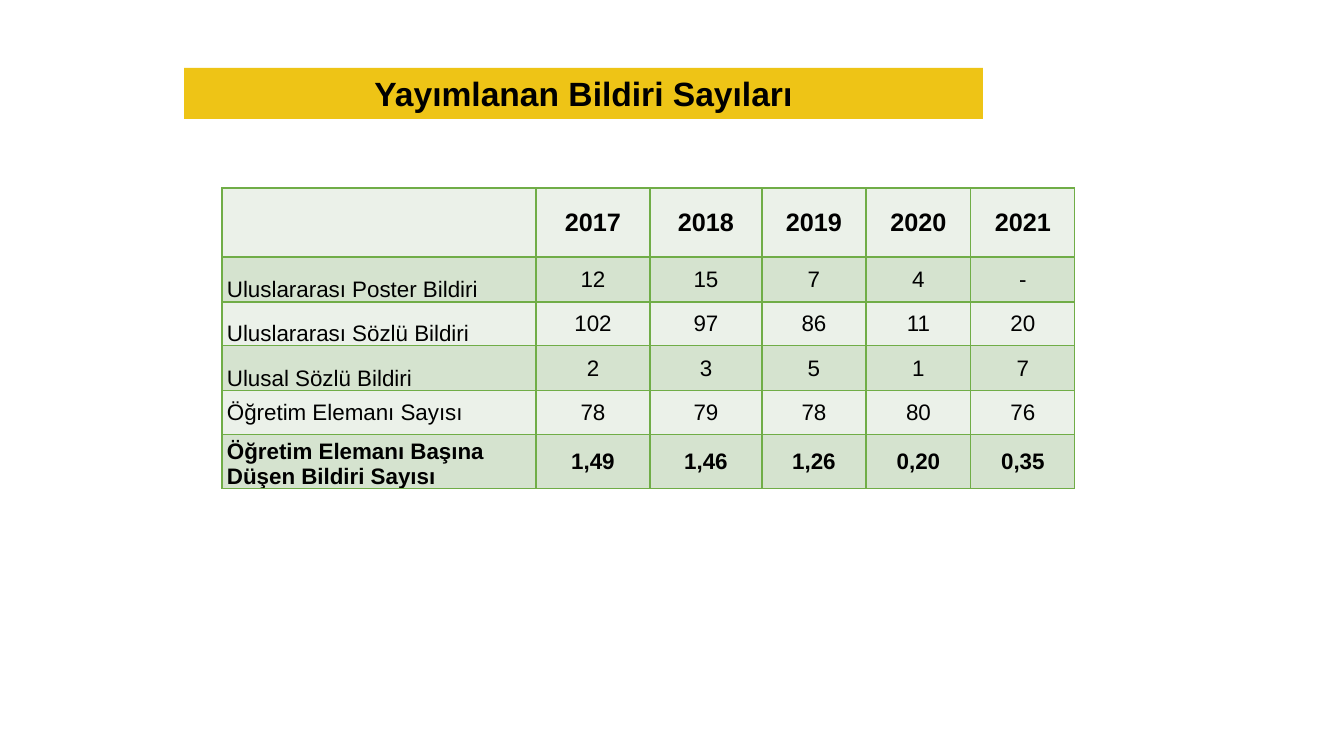
from lxml.etree import SubElement
from pptx import Presentation
from pptx.dml.color import RGBColor
from pptx.enum.text import MSO_ANCHOR as Anchor, MSO_AUTO_SIZE as AutoSize, PP_ALIGN as Align
from pptx.oxml.ns import qn
from pptx.util import Pt

EMU_PER_PX = 914400 / 100.8
FONT = "Arial"
BLACK = RGBColor(0x00, 0x00, 0x00)
GOLD = RGBColor(0xEE, 0xC4, 0x16)
GREEN = RGBColor(0x70, 0xAD, 0x47)
BANDS = [RGBColor(0xEB, 0xF1, 0xE9), RGBColor(0xD5, 0xE3, 0xCF)]

COLUMN_WIDTHS = [314, 114, 112, 104, 105, 104]
ROW_HEIGHTS = [69, 45, 44, 45, 44, 54]
PAPER_COUNTS = [
    ["", "2017", "2018", "2019", "2020", "2021"],
    ["Uluslararası Poster Bildiri", "12", "15", "7", "4", "-"],
    ["Uluslararası Sözlü Bildiri", "102", "97", "86", "11", "20"],
    ["Ulusal Sözlü Bildiri", "2", "3", "5", "1", "7"],
    ["Öğretim Elemanı Sayısı", "78", "79", "78", "80", "76"],
    ["Öğretim Elemanı Başına Düşen Bildiri Sayısı", "1,49", "1,46", "1,26", "0,20", "0,35"],
]
HEADER_ROW, STAFF_ROW, RATIO_ROW = 0, 4, 5


def px(length):
    return round(length * EMU_PER_PX)


def write_text(frame, text, size, bold, align):
    frame.text = text
    paragraph = frame.paragraphs[0]
    paragraph.alignment = align
    font = paragraph.font
    font.name, font.size, font.bold = FONT, Pt(size), bold
    font.color.rgb = BLACK


def add_banner(slide, text, left, top, width, height):
    banner = slide.shapes.title
    banner.left, banner.top, banner.width, banner.height = map(px, (left, top, width, height))
    banner.fill.solid()
    banner.fill.fore_color.rgb = GOLD
    frame = banner.text_frame
    frame.auto_size = AutoSize.NONE
    frame.vertical_anchor = Anchor.MIDDLE
    write_text(frame, text, 24, True, Align.CENTER)


def set_borders(cell, color, width):
    properties = cell._tc.get_or_add_tcPr()
    for side in ("lnL", "lnR", "lnT", "lnB"):
        line = SubElement(properties, qn(f"a:{side}"), w=str(Pt(width)))
        fill = SubElement(line, qn("a:solidFill"))
        SubElement(fill, qn("a:srgbClr"), val=str(color))


def format_cell(cell, text, row, column):
    is_label = column == 0
    set_borders(cell, GREEN, 1)
    cell.fill.solid()
    cell.fill.fore_color.rgb = BANDS[row % 2]
    cell.margin_left = cell.margin_right = px(5)
    cell.margin_top = cell.margin_bottom = 0
    # Labels sit at the bottom of their rows, except the staff row
    cell.vertical_anchor = Anchor.BOTTOM if is_label and row != STAFF_ROW else Anchor.MIDDLE
    write_text(
        cell.text_frame, text,
        size=18 if row == HEADER_ROW else 16,
        bold=row in (HEADER_ROW, RATIO_ROW),
        align=Align.LEFT if is_label else Align.CENTER,
    )


def add_count_table(slide, rows, left, top):
    frame = slide.shapes.add_table(
        len(rows), len(rows[0]), px(left), px(top),
        px(sum(COLUMN_WIDTHS)), px(sum(ROW_HEIGHTS)),
    )
    table = frame.table
    for column, width in zip(table.columns, COLUMN_WIDTHS):
        column.width = px(width)
    for row, height in zip(table.rows, ROW_HEIGHTS):
        row.height = px(height)
    for row, texts in enumerate(rows):
        for column, text in enumerate(texts):
            format_cell(table.cell(row, column), text, row, column)


def main():
    presentation = Presentation()
    presentation.slide_width, presentation.slide_height = px(1344), px(756)
    slide = presentation.slides.add_slide(presentation.slide_layouts[5])

    # Title banner
    add_banner(slide, "Yayımlanan Bildiri Sayıları", 184, 68, 799, 51)

    # Paper counts by year
    add_count_table(slide, PAPER_COUNTS, 222, 188)

    presentation.save("out.pptx")


if __name__ == "__main__":
    main()
